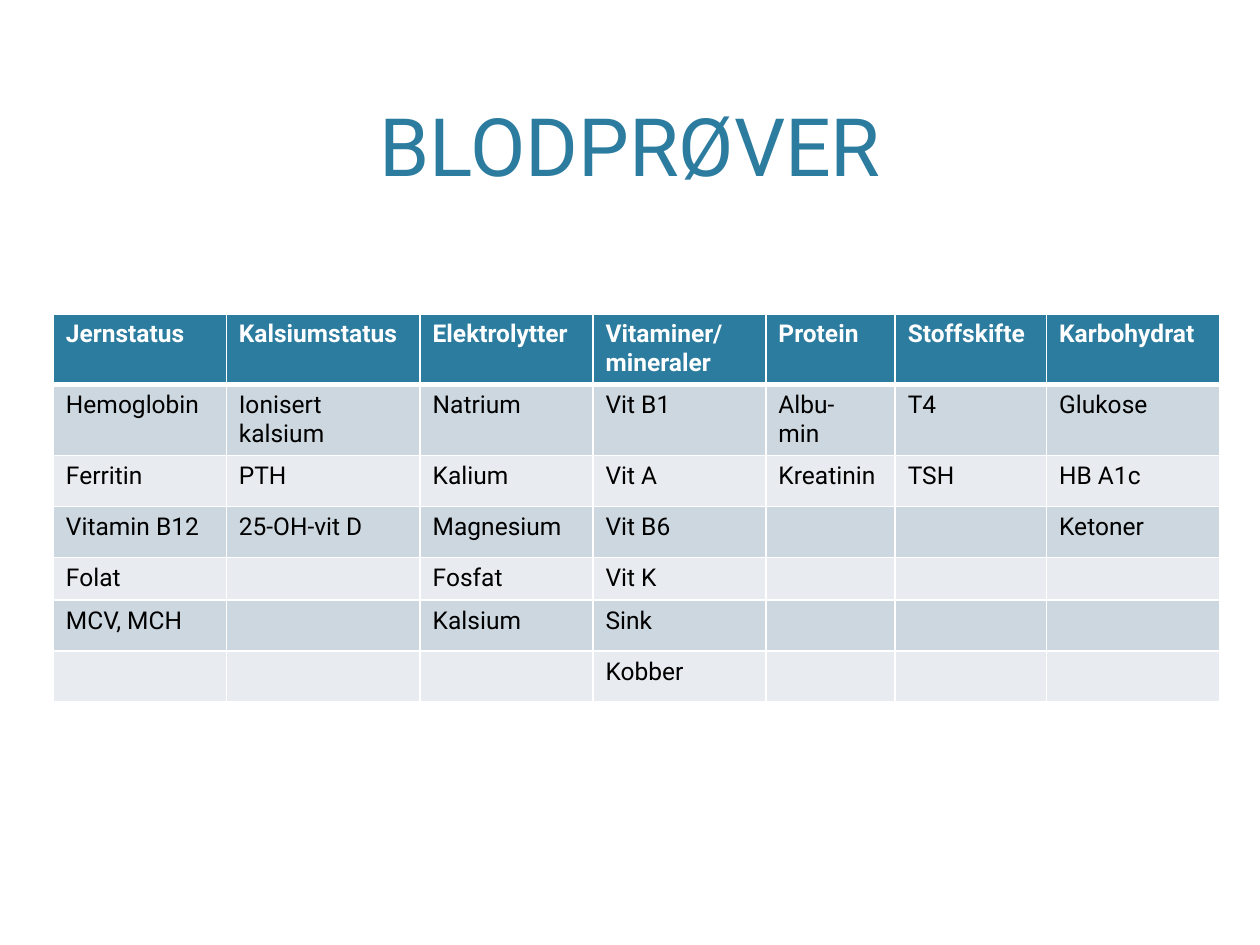
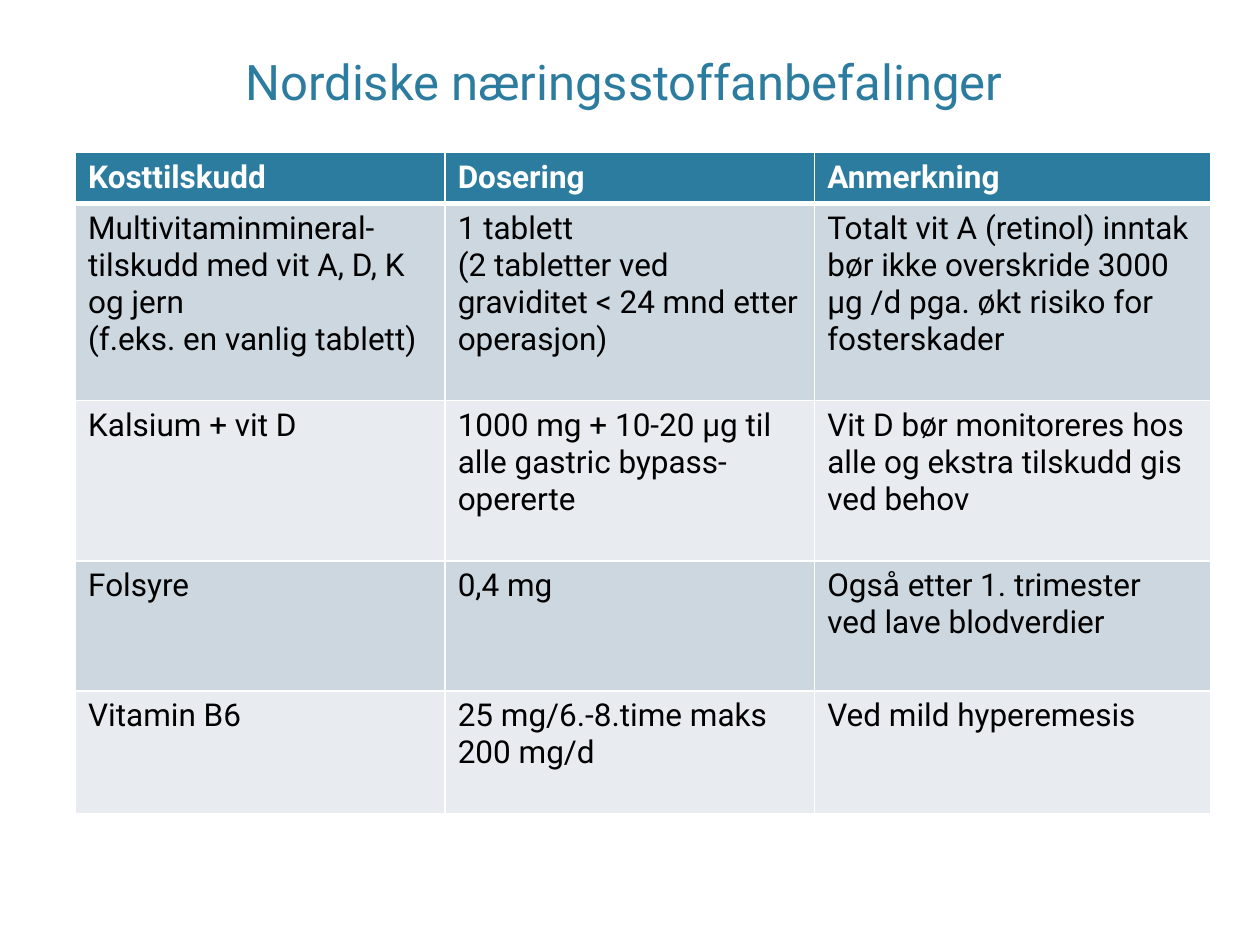
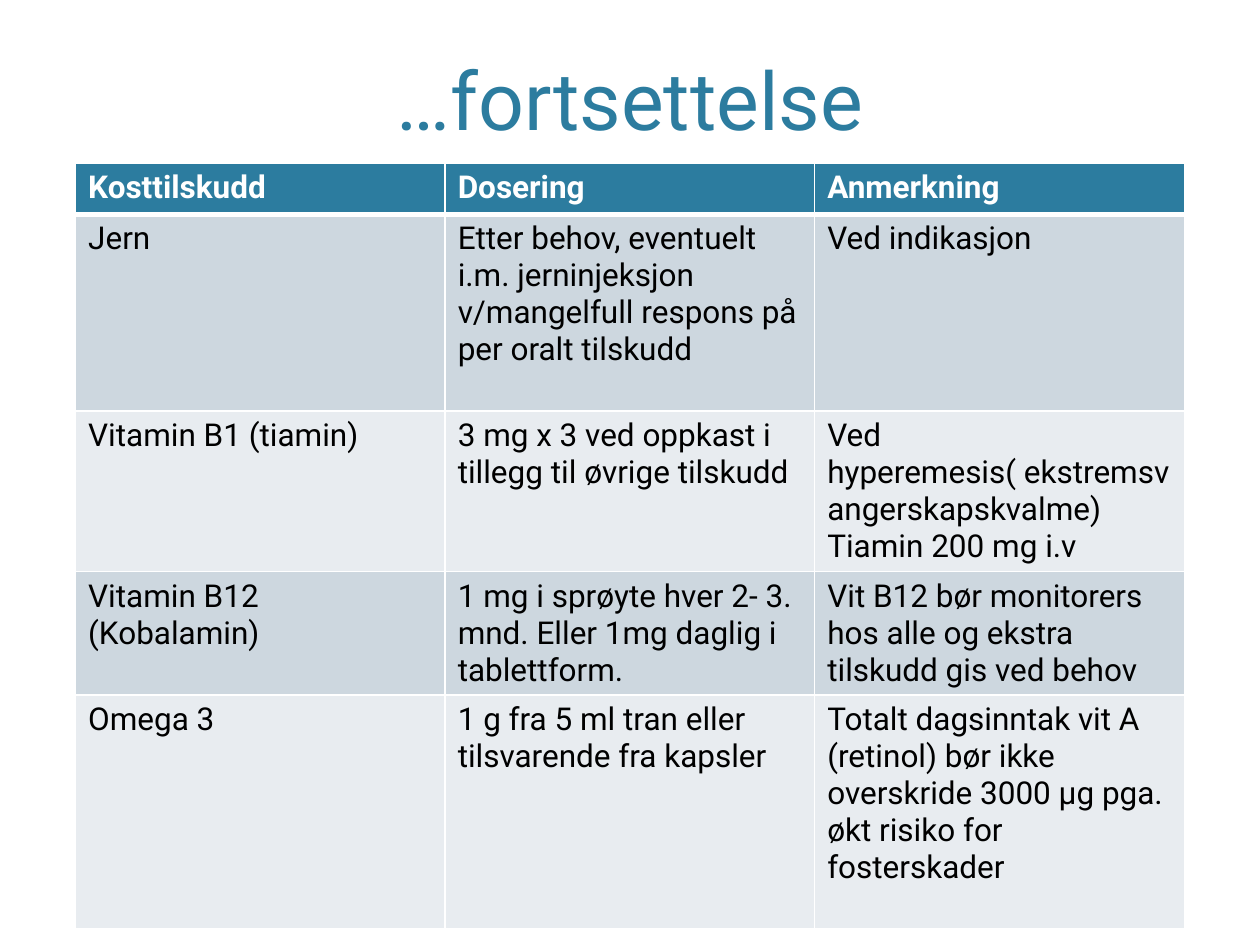
"""Build three slides of tables on blood tests and food supplements."""

import dataclasses
import typing

import lxml.etree
import pptx
import pptx.dml.color
import pptx.enum.text
import pptx.oxml.ns
import pptx.slide
import pptx.table
import pptx.text.text
import pptx.util

Pt = pptx.util.Pt
qn = pptx.oxml.ns.qn


@dataclasses.dataclass(frozen=True)
class Theme:
    """Colours, font and type sizes of the deck."""

    font: str = "Roboto"
    blue: str = "2C7C9F"
    white: str = "FFFFFF"
    black: str = "000000"
    bands: tuple[str, str] = ("CDD7DF", "E8ECF0")
    large: float = 46
    small: float = 28
    body: float = 18
    dense: float = 14
    thin: float = 1
    thick: float = 3


@dataclasses.dataclass(frozen=True)
class Title:
    """Wording, place and size of a slide title."""

    text: str
    top: float
    height: float
    size: float


@dataclasses.dataclass(frozen=True)
class Grid:
    """Place, measures and wording of a table."""

    left: float
    top: float
    cols: tuple[float, ...]
    rows: tuple[float, ...]
    size: float
    cells: tuple[tuple[str, ...], ...]


THEME = Theme()
EDGE = 43.2
WIDTH = 633.6
HEADS = ("Kosttilskudd", "Dosering", "Anmerkning")

PAGES = (
    (
        Title("BLODPRØVER", 8.64, 105.12, THEME.large),
        Grid(
            30.5, 179.3,
            (98.8, 110.8, 98.8, 98.8, 73.9, 86.5, 98.8),
            (39.8, 40.6, 29.2, 29.2, 23.6, 29.2, 29.2),
            THEME.dense,
            (
                ("Jernstatus", "Kalsiumstatus", "Elektrolytter", "Vitaminer/mineraler",
                 "Protein", "Stoffskifte", "Karbohydrat"),
                ("Hemoglobin", "Ionisert kalsium", "Natrium", "Vit B1", "Albu-\nmin",
                 "T4", "Glukose"),
                ("Ferritin", "PTH", "Kalium", "Vit A", "Kreatinin", "TSH", "HB A1c"),
                ("Vitamin B12", "25-OH-vit D", "Magnesium", "Vit B6", "", "", "Ketoner"),
                ("Folat", "", "Fosfat", "Vit K", "", "", ""),
                ("MCV, MCH", "", "Kalsium", "Sink", "", "", ""),
                ("", "", "", "Kobber", "", "", ""),
            ),
        ),
    ),
    (
        Title("Nordiske næringsstoffanbefalinger ", -68.4, 135.36, THEME.small),
        Grid(
            EDGE, 87.2, (211.2, 211.2, 226.2), (29.2, 112.6, 91.6, 74.2, 70.4), THEME.body,
            (
                HEADS,
                ("Multivitaminmineral-tilskudd med vit A, D, K og jern\v(f.eks. en vanlig tablett)",
                 "1 tablett\v(2 tabletter ved graviditet < 24 mnd etter operasjon)",
                 "Totalt vit A (retinol) inntak bør ikke overskride 3000 μg /d pga. "
                 "økt risiko for fosterskader"),
                ("Kalsium + vit D", "1000 mg + 10-20 μg til alle gastric bypass-opererte",
                 "Vit D bør monitoreres hos alle og ekstra tilskudd gis ved behov"),
                ("Folsyre", "0,4 mg", "Også etter 1. trimester ved lave blodverdier"),
                ("Vitamin B6", "25 mg/6.-8.time maks 200 mg/d", "Ved mild hyperemesis"),
            ),
        ),
    ),
    (
        Title("…fortsettelse", 8.64, 78.48, THEME.large),
        Grid(
            EDGE, 93.2, (211.2, 211.2, 211.2), (29.2, 112.6, 91.6, 70.4, 133.6), THEME.body,
            (
                HEADS,
                ("Jern",
                 "Etter behov, eventuelt i.m. jerninjeksjon v/mangelfull respons på "
                 "per oralt tilskudd",
                 "Ved indikasjon"),
                ("Vitamin B1 (tiamin)", "3 mg x 3 ved oppkast i tillegg til øvrige tilskudd",
                 "Ved hyperemesis( ekstremsvangerskapskvalme) Tiamin 200 mg i.v"),
                ("Vitamin B12 (Kobalamin)",
                 "1 mg i sprøyte hver 2- 3. mnd. Eller 1mg daglig i tablettform.",
                 "Vit B12 bør monitorers hos alle og ekstra tilskudd gis ved behov"),
                ("Omega 3", "1 g fra 5 ml tran eller tilsvarende fra kapsler",
                 "Totalt dagsinntak vit A (retinol) bør ikke overskride 3000 μg pga. "
                 "økt risiko for fosterskader"),
            ),
        ),
    ),
)


def apply(item: typing.Any, form: dict[str, typing.Any]) -> None:
    """Set each named value on an object."""
    for name, value in form.items():
        setattr(item, name, value)


def tint(text: str) -> pptx.dml.color.RGBColor:
    """Turn a hex text into a colour."""
    return pptx.dml.color.RGBColor.from_string(text)


def style(frame: pptx.text.text.TextFrame, size: float, hue: str, bold: bool) -> None:
    """Format all runs of a frame, and the end mark of blank lines."""
    for para in frame.paragraphs:
        for run in para.runs:
            apply(run.font, {"name": THEME.font, "size": Pt(size), "bold": bold})
            run.font.color.rgb = tint(hue)
        if not para.runs:
            lxml.etree.SubElement(para._p, qn("a:endParaRPr"), sz=str(int(size * 100)))


def border(cell: pptx.table._Cell, row: int) -> None:
    """Draw white cell edges, with a thick rule under the heads."""
    top = THEME.thick if row == 1 else THEME.thin
    base = THEME.thick if row == 0 else THEME.thin
    edges = {"lnL": THEME.thin, "lnR": THEME.thin, "lnT": top, "lnB": base}
    props = cell._tc.get_or_add_tcPr()
    for tag, width in edges.items():
        line = lxml.etree.SubElement(props, qn(f"a:{tag}"), w=str(int(Pt(width))))
        fill = lxml.etree.SubElement(line, qn("a:solidFill"))
        lxml.etree.SubElement(fill, qn("a:srgbClr"), val=THEME.white)


def add_title(slide: pptx.slide.Slide, title: Title) -> None:
    """Place and format the title."""
    shape = slide.shapes.title
    apply(shape, {"left": Pt(EDGE), "top": Pt(title.top),
                  "width": Pt(WIDTH), "height": Pt(title.height)})
    frame = shape.text_frame
    apply(frame, {"text": title.text, "word_wrap": True,
                  "auto_size": pptx.enum.text.MSO_AUTO_SIZE.NONE,
                  "vertical_anchor": pptx.enum.text.MSO_ANCHOR.BOTTOM})
    frame.paragraphs[0].alignment = pptx.enum.text.PP_ALIGN.CENTER
    style(frame, title.size, THEME.blue, False)


def add_grid(slide: pptx.slide.Slide, grid: Grid) -> None:
    """Draw a table with a head row and banded body rows."""
    table = slide.shapes.add_table(
        len(grid.rows), len(grid.cols), Pt(grid.left), Pt(grid.top),
        Pt(sum(grid.cols)), Pt(sum(grid.rows))).table
    for col, width in zip(table.columns, grid.cols):
        col.width = Pt(width)
    for row, height in enumerate(grid.rows):
        table.rows[row].height = Pt(height)
        head = row == 0
        back = THEME.blue if head else THEME.bands[(row - 1) % 2]
        for col, text in enumerate(grid.cells[row]):
            cell = table.cell(row, col)
            cell.text = text
            style(cell.text_frame, grid.size, THEME.white if head else THEME.black, head)
            border(cell, row)
            cell.fill.solid()
            cell.fill.fore_color.rgb = tint(back)


def main() -> None:
    """Build and save the deck."""
    deck = pptx.Presentation()
    apply(deck, {"slide_width": Pt(720), "slide_height": Pt(540)})
    layout = deck.slide_layouts.get_by_name("Title Only")
    for title, grid in PAGES:
        slide = deck.slides.add_slide(layout)
        add_title(slide, title)
        add_grid(slide, grid)
    deck.save("out.pptx")


if __name__ == "__main__":
    main()
